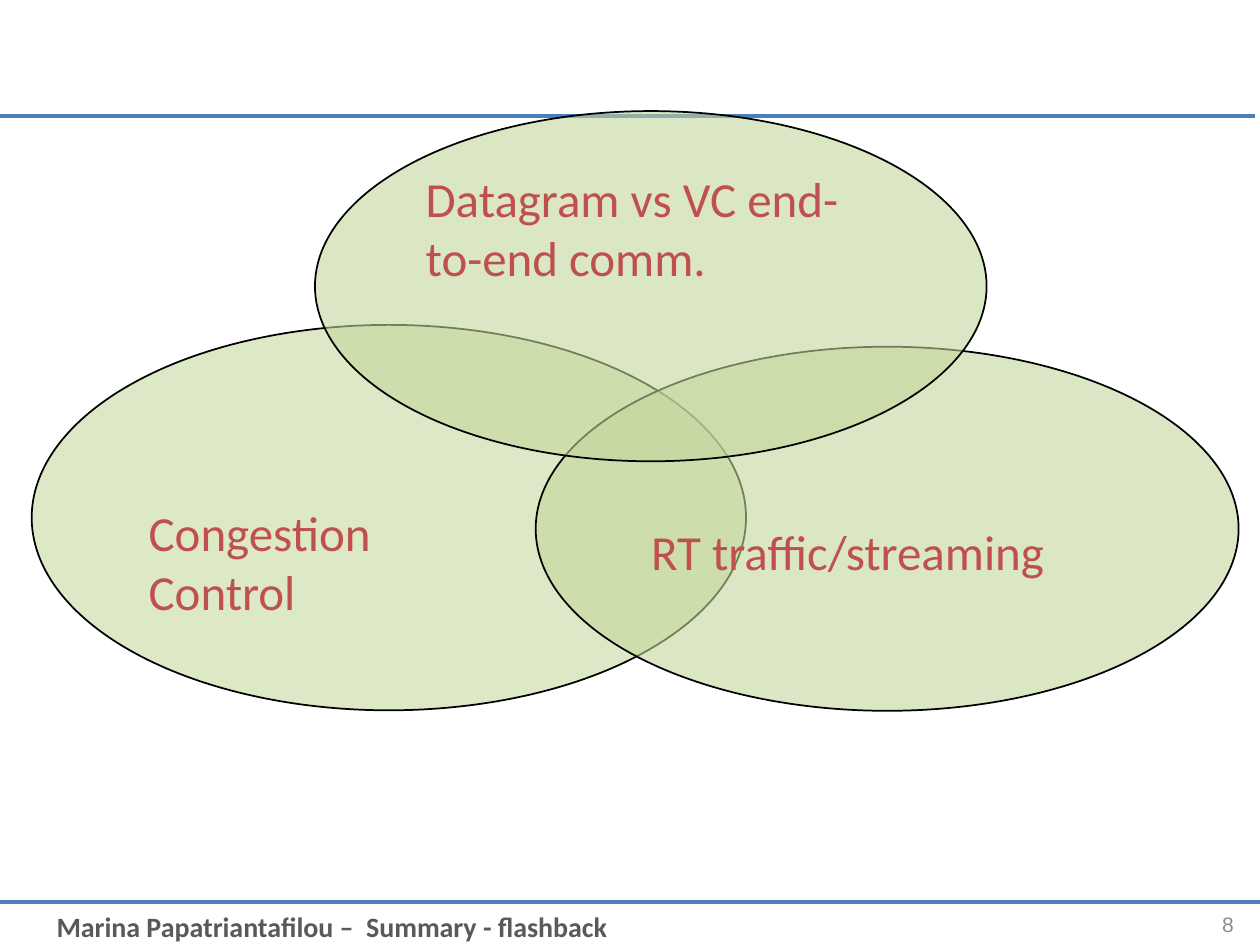
from lxml.etree import SubElement
from pptx import Presentation
from pptx.dml.color import RGBColor
from pptx.enum.shapes import MSO_CONNECTOR, MSO_SHAPE
from pptx.enum.text import MSO_ANCHOR, PP_ALIGN
from pptx.oxml.ns import qn
from pptx.util import Cm, Pt

RULE_BLUE = "4B7EBC"
TOPIC_GREEN = "C3D69B"
TOPIC_RED = "C0504D"
FOOTER_GRAY = "595959"
NUMBER_GRAY = "8C8C8C"
BLACK = "000000"


def color(hex_value):
    return RGBColor.from_string(hex_value)


def write_text(shape, lines, size=28, font="Calibri", hex_value=TOPIC_RED, bold=False,
               align=PP_ALIGN.LEFT, anchor=MSO_ANCHOR.TOP, top=0.13):
    """Fill a shape with one paragraph per line, starting `top` cm below its text area."""
    frame = shape.text_frame
    frame.word_wrap = True
    frame.vertical_anchor = anchor
    frame.margin_top = Cm(top)
    frame.text = "\n".join(lines)
    for paragraph in frame.paragraphs:
        paragraph.alignment = align
        paragraph.font.size = Pt(size)
        paragraph.font.name = font
        paragraph.font.bold = bold
        paragraph.font.color.rgb = color(hex_value)


def add_rule(slide, left, top, width):
    line = slide.shapes.add_connector(
        MSO_CONNECTOR.STRAIGHT, Cm(left), Cm(top), Cm(left + width), Cm(top))
    line.line.color.rgb = color(RULE_BLUE)
    line.line.width = Pt(2.25)
    SubElement(line._element.spPr, qn("a:effectLst"))


def add_label(slide, box, text, **text_format):
    label = slide.shapes.add_textbox(*map(Cm, box))
    write_text(label, [text], **text_format)


def add_topic(slide, box, lines, opacity, **text_format):
    """Add a see-through ellipse that holds one topic."""
    ellipse = slide.shapes.add_shape(MSO_SHAPE.OVAL, *map(Cm, box))
    ellipse.shadow.inherit = False
    ellipse.fill.solid()
    ellipse.fill.fore_color.rgb = color(TOPIC_GREEN)
    fill_color = ellipse._element.spPr.find(qn("a:solidFill")).find(qn("a:srgbClr"))
    SubElement(fill_color, qn("a:alpha"), val=str(opacity * 1000))
    ellipse.line.color.rgb = color(BLACK)
    ellipse.line.width = Pt(1)
    write_text(ellipse, lines, **text_format)


def main():
    presentation = Presentation()
    presentation.slide_width = Cm(25.4)
    presentation.slide_height = Cm(19.05)
    slide = presentation.slides.add_slide(presentation.slide_layouts[6])

    # Footer and the rules that frame the content
    add_rule(slide, 0, 18.19, 25.4)
    add_label(slide, (0.89, 18.21, 23.5, 0.94),
              "Marina Papatriantafilou –  Summary - flashback",
              size=16, hex_value=FOOTER_GRAY, bold=True)
    add_rule(slide, -0.1, 2.34, 25.4)

    # Overlapping topics, from back to front
    add_topic(slide, (0.64, 6.55, 14.4, 7.77), ["Congestion", "Control"], 56, top=2.45)
    add_label(slide, (23.09, 18.11, 2.03, 1.02), "8", size=12, font="Arial",
              hex_value=NUMBER_GRAY, align=PP_ALIGN.RIGHT, anchor=MSO_ANCHOR.MIDDLE)
    add_topic(slide, (10.8, 6.99, 14.17, 7.34), ["RT traffic/streaming"], 59, top=2.45)
    add_topic(slide, (6.35, 2.24, 13.54, 7.06), ["Datagram vs VC end-to-end comm."], 59)

    presentation.save("out.pptx")


if __name__ == "__main__":
    main()
